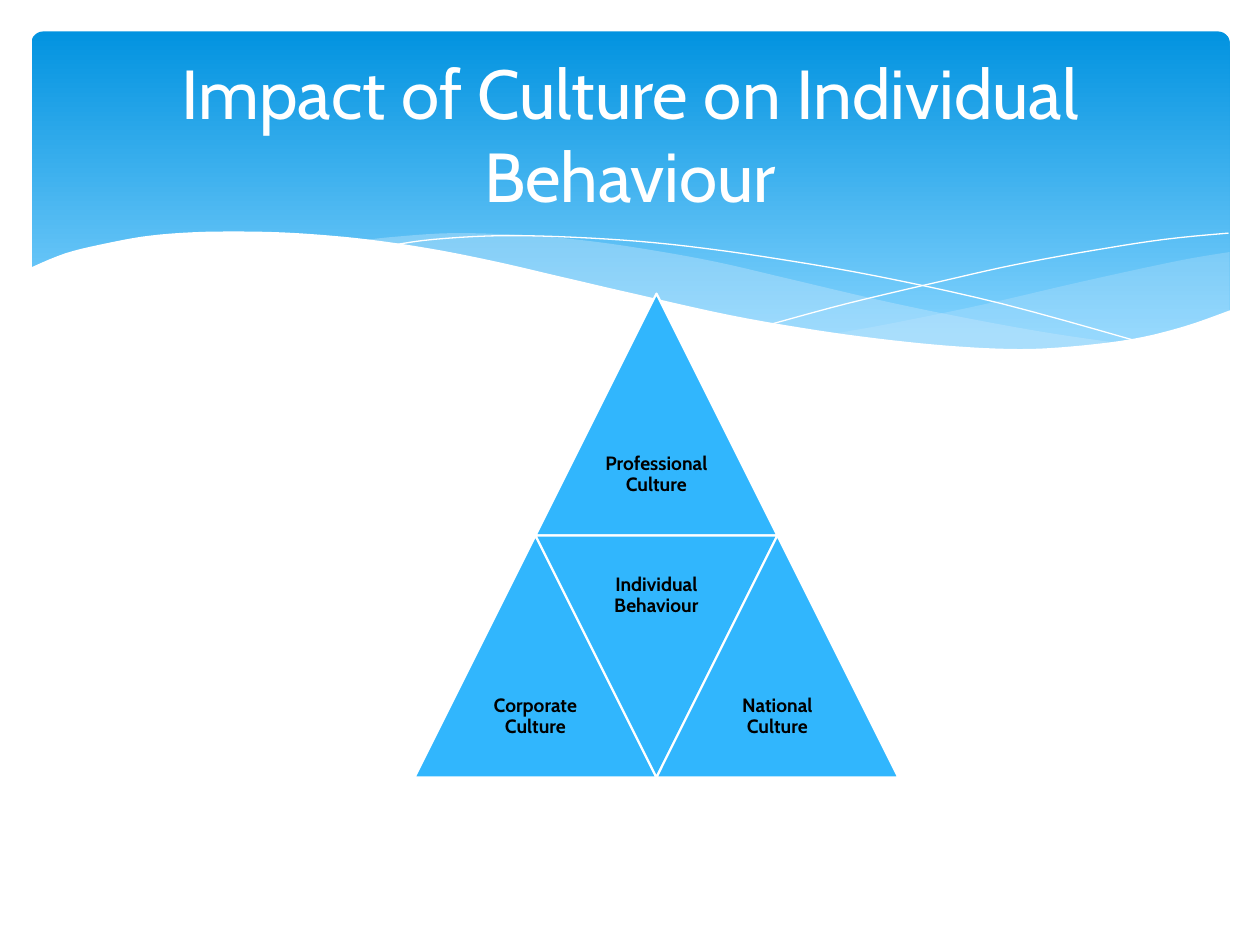
from dataclasses import dataclass
from typing import Optional

from lxml.etree import SubElement
from pptx import Presentation
from pptx.dml.color import RGBColor
from pptx.enum.shapes import MSO_SHAPE
from pptx.enum.text import MSO_ANCHOR, MSO_AUTO_SIZE, PP_ALIGN
from pptx.oxml.ns import qn
from pptx.util import Pt

PX = 9144  # EMU per px, 100 px to the inch
FONT = "Cabin"
WHITE = RGBColor(0xFF, 0xFF, 0xFF)
BLACK = RGBColor(0x00, 0x00, 0x00)
BLUE = RGBColor(0x31, 0xB6, 0xFD)
BANNER_TOP = RGBColor(0x02, 0x93, 0xE0)
BANNER_BOTTOM = RGBColor(0x83, 0xD3, 0xFE)
PALE = RGBColor(0xC6, 0xE7, 0xFC)

Point = tuple[int, int]


@dataclass
class Wave:
    edges: list[list[Point]]  # smooth edges, joined by straight lines
    fill: Optional[RGBColor] = None  # without a fill the wave is a thin line
    alpha: int = 100


@dataclass
class Triangle:
    label: str
    x: int
    y: int
    inverted: bool = False


SIDE = 192
APEX_X, APEX_Y = 425, 233
MID_Y = APEX_Y + SIDE
TRIANGLES = [
    Triangle("Professional Culture", APEX_X, APEX_Y),
    Triangle("Corporate Culture", APEX_X - SIDE // 2, MID_Y),
    Triangle("Individual Behaviour", APEX_X, MID_Y, inverted=True),
    Triangle("National Culture", APEX_X + SIDE // 2, MID_Y),
]

WAVES = [
    Wave([[(976, 200), (935, 207), (861, 223), (779, 242), (706, 257), (661, 265)],
          [(661, 265), (705, 271), (757, 276), (803, 278), (854, 276),
           (897, 270), (935, 262), (976, 247)]], PALE, 29),
    Wave([[(893, 273), (837, 265), (775, 254), (706, 240), (629, 222), (569, 208),
           (514, 198), (465, 191), (420, 187), (361, 185), (313, 188), (286, 191)],
          [(286, 191), (342, 199), (404, 211), (449, 222), (530, 240), (601, 255),
           (665, 266), (722, 274), (773, 277), (818, 278), (857, 277), (893, 273)]],
         PALE, 40),
    Wave([[(309, 195), (344, 190), (401, 187), (469, 189), (533, 194), (608, 204),
           (695, 219), (795, 241), (907, 272)]]),
    Wave([[(613, 257), (672, 241), (748, 223), (806, 210), (866, 199),
           (924, 190), (975, 185)]]),
    Wave([[(977, 246), (940, 259), (899, 269), (850, 275), (809, 277), (761, 275),
           (708, 270), (648, 262), (579, 250), (503, 233), (447, 220), (391, 207),
           (340, 197), (292, 190), (250, 186), (211, 184), (161, 184), (119, 187),
           (85, 193), (52, 201), (23, 213)],
          [(23, 329), (977, 329)]], WHITE),
]


def smooth(pts: list[Point], steps: int = 5) -> list[tuple[float, float]]:
    """Run a Catmull-Rom curve through the points; two points stay straight."""
    if len(pts) < 3:
        return list(pts)
    padded = [pts[0], *pts, pts[-1]]
    curve = [pts[0]]
    for a, b, c, d in zip(padded, padded[1:], padded[2:], padded[3:]):
        for t in (i / steps for i in range(1, steps + 1)):
            curve.append(tuple(
                (2 * q + (r - p) * t + (2 * p - 5 * q + 4 * r - s) * t**2
                 + (3 * q - p - 3 * r + s) * t**3) / 2
                for p, q, r, s in zip(a, b, c, d)))
    return curve


def add_banner(shapes) -> None:
    sp = shapes.add_shape(MSO_SHAPE.ROUNDED_RECTANGLE, 25 * PX, 25 * PX, 951 * PX, 270 * PX)
    sp.adjustments[0] = 0.034
    sp.shadow.inherit = False
    sp.line.fill.background()
    sp.fill.gradient()
    sp.fill.gradient_angle = 270
    top, bottom = sp.fill.gradient_stops
    top.color.rgb, top.position = BANNER_TOP, 0
    bottom.color.rgb, bottom.position = BANNER_BOTTOM, 0.9


def add_wave(shapes, wave: Wave) -> None:
    pts = [(round(x * PX), round(y * PX)) for edge in wave.edges for x, y in smooth(edge)]
    builder = shapes.build_freeform(*pts[0], scale=1.0)
    builder.add_line_segments(pts[1:], close=wave.fill is not None)
    sp = builder.convert_to_shape()
    sp.shadow.inherit = False
    if wave.fill is None:
        sp.fill.background()
        sp.line.color.rgb = WHITE
        sp.line.width = Pt(0)
        return
    sp.line.fill.background()
    sp.fill.solid()
    sp.fill.fore_color.rgb = wave.fill
    if wave.alpha < 100:
        color = sp.fill._xPr.find(".//" + qn("a:srgbClr"))
        SubElement(color, qn("a:alpha"), val=str(wave.alpha * 1000))


def format_text(tf, text: str, size: float, color: RGBColor, bold: bool = False) -> None:
    tf.text = text
    tf.word_wrap = True
    tf.auto_size = MSO_AUTO_SIZE.NONE
    tf.vertical_anchor = MSO_ANCHOR.MIDDLE
    p = tf.paragraphs[0]
    p.alignment = PP_ALIGN.CENTER
    font = p.runs[0].font
    font.name, font.size, font.bold = FONT, Pt(size), bold
    font.color.rgb = color


def add_triangle(shapes, tri: Triangle) -> None:
    sp = shapes.add_shape(MSO_SHAPE.ISOSCELES_TRIANGLE,
                          tri.x * PX, tri.y * PX, SIDE * PX, SIDE * PX)
    sp.rotation = 180 if tri.inverted else 0
    sp.shadow.inherit = False
    sp.fill.solid()
    sp.fill.fore_color.rgb = BLUE
    sp.line.color.rgb = WHITE
    sp.line.width = Pt(1.25)

    # The label fills the wide half of the triangle
    half = SIDE // 2
    top = tri.y if tri.inverted else tri.y + half
    tf = shapes.add_textbox((tri.x + half // 2) * PX, top * PX, half * PX, half * PX).text_frame
    tf.margin_left = tf.margin_right = tf.margin_top = tf.margin_bottom = 5 * PX
    format_text(tf, tri.label, 11, BLACK, bold=True)
    tf.paragraphs[0].line_spacing = 0.9
    tf.paragraphs[0].space_after = Pt(3.85)


def main() -> None:
    prs = Presentation()
    prs.slide_width, prs.slide_height = 1000 * PX, 750 * PX
    s = prs.slides.add_slide(prs.slide_layouts[5])
    shapes = s.shapes

    # Banner with waves
    add_banner(shapes)
    for wave in WAVES:
        add_wave(shapes, wave)

    # Title, raised above the banner
    title = shapes.title
    title.left, title.top, title.width, title.height = 50 * PX, 37 * PX, 900 * PX, 137 * PX
    format_text(title.text_frame, "Impact of Culture on Individual Behaviour", 39.6, WHITE)
    shapes._spTree.append(title._element)

    # Pyramid of four triangles
    for tri in TRIANGLES:
        add_triangle(shapes, tri)

    prs.save("out.pptx")


if __name__ == "__main__":
    main()
